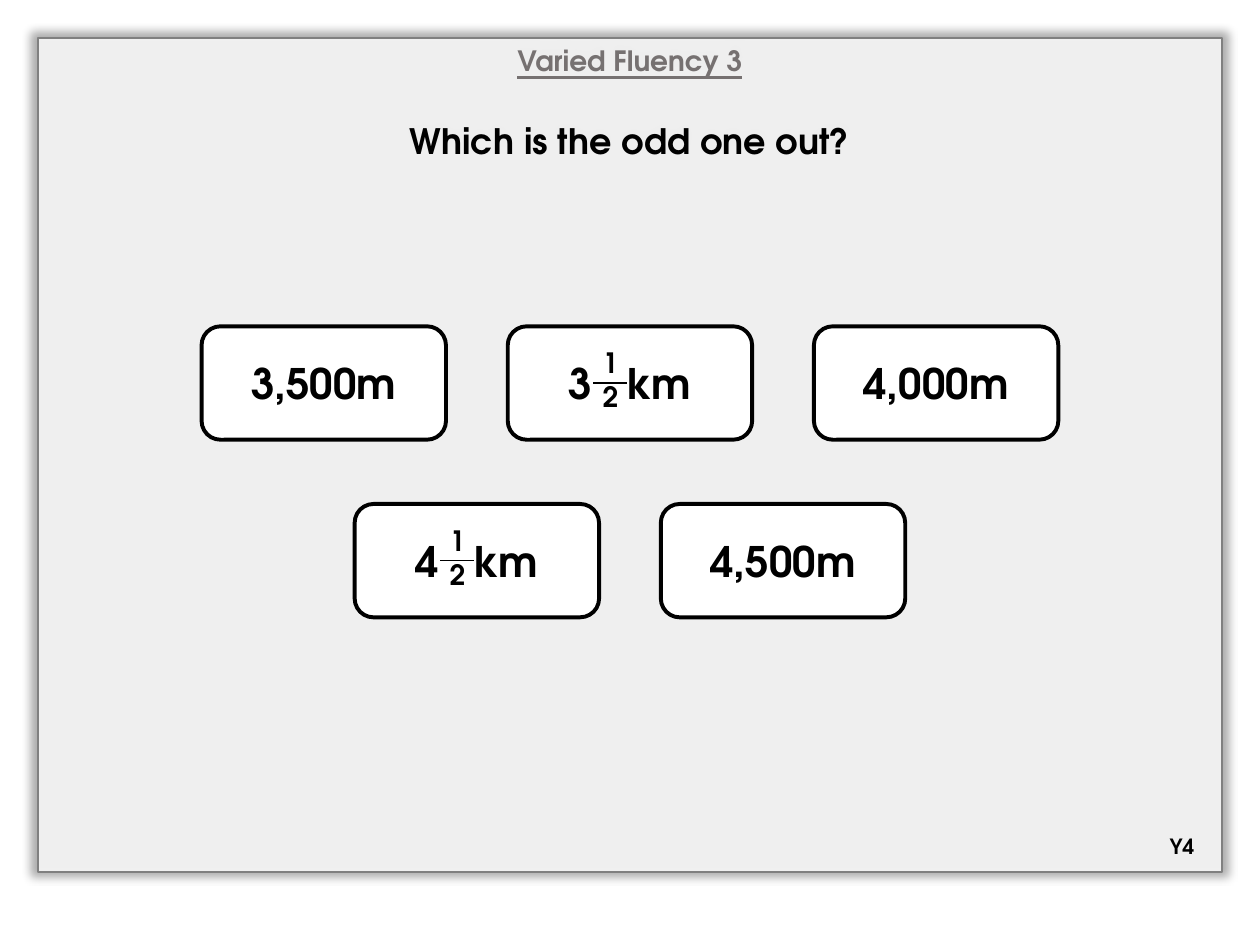
"""Build a maths slide asking which length is the odd one out."""
from lxml.etree import SubElement
from pptx import Presentation
from pptx.dml.color import RGBColor
from pptx.enum.shapes import MSO_SHAPE
from pptx.enum.text import MSO_ANCHOR, MSO_AUTO_SIZE, PP_ALIGN
from pptx.oxml import parse_xml
from pptx.oxml.ns import nsdecls, qn
from pptx.util import Inches, Pt

FONT = "TeX Gyre Adventor"
COLOURS = {"white": "FFFFFF", "black": "000000", "border": "808080", "title": "767171"}
TITLE = "Varied Fluency 3"
QUESTION = "Which is the odd one out?"
YEAR = "Y4"
CARD_ROWS = [
    [("3,500m",), ("3", ("1", "2"), "km"), ("4,000m",)],
    [("4", ("1", "2"), "km"), ("4,500m",)],
]
PAGE_WIDTH, PAGE_HEIGHT = 10, 7.5
CARD_WIDTH, CARD_HEIGHT = 1.94, 0.9
COLUMN_GAP, ROW_GAP, FIRST_TOP = 0.49, 0.51, 2.59
FRACTION_LEFT, FRACTION_TOP, FRACTION_CELL = 0.68, 0.18, 0.27
FRACTION_SPACING = 1330


def colour(name):
    return RGBColor.from_string(COLOURS[name])


def write(paragraph, text, size=24, ink="black", underline=False):
    paragraph.alignment = PP_ALIGN.CENTER
    span = paragraph.add_run()
    span.text = text
    span.font.name, span.font.size = FONT, Pt(size)
    span.font.bold, span.font.underline = True, underline
    span.font.color.rgb = colour(ink)
    return span


def add_box(page, kind, area, line, width):
    box = page.shapes.add_shape(kind, *map(Inches, area))
    box.shadow.inherit = False
    box.fill.solid()
    box.fill.fore_color.rgb = colour("white")
    box.line.color.rgb = colour(line)
    box.line.width = Pt(width)
    return box


def add_panel(page):
    panel = add_box(page, MSO_SHAPE.RECTANGLE, (0.3, 0.3, 9.4, 6.62), "border", 1)
    properties = panel._element.spPr
    fill = properties.find(qn("a:solidFill"))
    SubElement(fill[0], qn("a:alpha"), val="82000")
    properties.find(qn("a:effectLst")).append(parse_xml(
        f'<a:outerShdw {nsdecls("a")} blurRad="{Pt(5)}" sx="101000" sy="101000" '
        f'algn="ctr" rotWithShape="0"><a:srgbClr val="{COLOURS["black"]}">'
        '<a:alpha val="40000"/></a:srgbClr></a:outerShdw>'))
    frame = panel.text_frame
    frame.vertical_anchor = MSO_ANCHOR.TOP
    write(frame.paragraphs[0], TITLE, size=16, ink="title", underline=True)
    question = frame.add_paragraph()
    question.space_before = Pt(24)
    write(question, QUESTION, size=20)


def add_fraction(page, numbers, left, top):
    size = Inches(FRACTION_CELL)
    frame = page.shapes.add_table(len(numbers), 1, Inches(left), Inches(top),
                                  size, size * len(numbers))
    table = frame.table
    table.first_row = table.horz_banding = False
    for row, (number, edge) in enumerate(zip(numbers, ("lnB", "lnT"))):
        cell = table.cell(row, 0)
        cell.margin_left = cell.margin_right = cell.margin_top = cell.margin_bottom = 0
        cell.vertical_anchor = MSO_ANCHOR.MIDDLE
        write(cell.text_frame.paragraphs[0], number, size=16)
        cell.fill.background()
        properties = cell._tc.get_or_add_tcPr()
        edges = ("lnL", "lnR", "lnT", "lnB")
        for position, name in enumerate(edges):
            paint = (f'<a:solidFill><a:srgbClr val="{COLOURS["black"]}"/></a:solidFill>'
                     if name == edge else "<a:noFill/>")
            properties.insert(position, parse_xml(
                f'<a:{name} {nsdecls("a")} w="{Pt(1)}">{paint}</a:{name}>'))


def add_card(page, parts, left, top):
    card = add_box(page, MSO_SHAPE.ROUNDED_RECTANGLE,
                   (left, top, CARD_WIDTH, CARD_HEIGHT), "black", 2.25)
    card.text_frame.vertical_anchor = MSO_ANCHOR.MIDDLE
    paragraph = card.text_frame.paragraphs[0]
    for part in parts:
        if isinstance(part, tuple):
            space = write(paragraph, " ")
            space.font._element.set("spc", str(FRACTION_SPACING))
            add_fraction(page, part, left + FRACTION_LEFT, top + FRACTION_TOP)
        else:
            write(paragraph, part)


def add_year(page):
    box = page.shapes.add_textbox(*map(Inches, (9.12, 6.57, 0.52, 0.3)))
    box.text_frame.word_wrap = True
    box.text_frame.auto_size = MSO_AUTO_SIZE.SHAPE_TO_FIT_TEXT
    write(box.text_frame.paragraphs[0], YEAR, size=12)


def main():
    deck = Presentation()
    deck.slide_width, deck.slide_height = Inches(PAGE_WIDTH), Inches(PAGE_HEIGHT)
    page = deck.slides.add_slide(deck.slide_layouts[6])
    add_panel(page)
    for row, cards in enumerate(CARD_ROWS):
        row_width = len(cards) * (CARD_WIDTH + COLUMN_GAP) - COLUMN_GAP
        row_left = (PAGE_WIDTH - row_width) / 2
        top = FIRST_TOP + row * (CARD_HEIGHT + ROW_GAP)
        for column, parts in enumerate(cards):
            add_card(page, parts, row_left + column * (CARD_WIDTH + COLUMN_GAP), top)
    add_year(page)
    deck.save("out.pptx")


if __name__ == "__main__":
    main()
